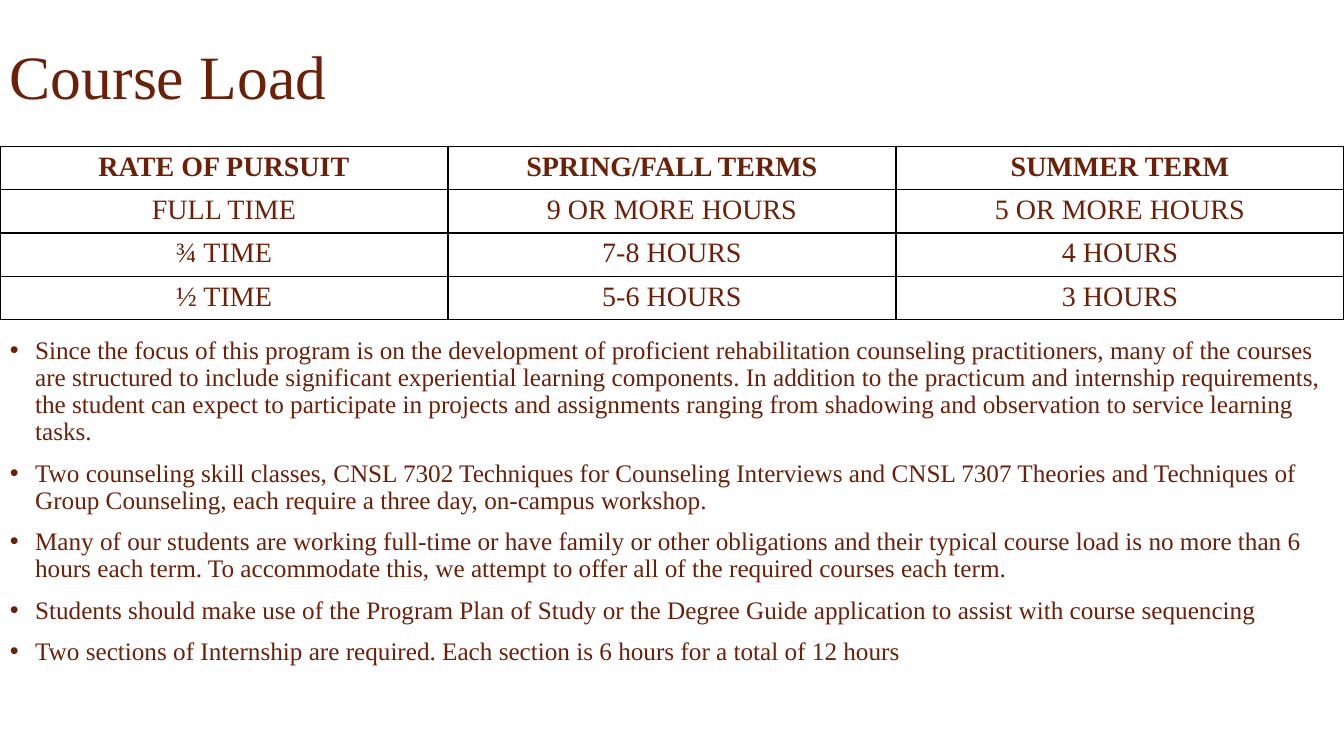
"""Build the Course Load slide with its table of hours and its notes."""
from dataclasses import dataclass

from lxml.etree import SubElement
from pptx import Presentation
from pptx.dml.color import RGBColor
from pptx.enum.text import MSO_ANCHOR, PP_ALIGN
from pptx.oxml.ns import qn
from pptx.slide import Slide
from pptx.table import _Cell
from pptx.text.text import TextFrame, _Paragraph
from pptx.util import Emu, Pt

EMU_PER_PX = 6350
SLIDE_WIDTH, SLIDE_HEIGHT = 1920, 1080
TABLE_TOP, ROW_HEIGHT = 209, 62
FONT_NAME = "Times New Roman"
COLOURS = {"text": "6C2008", "cell": "FFFFFF", "border": "000000"}

COURSE_LOADS = [
    ("RATE OF PURSUIT", "SPRING/FALL TERMS", "SUMMER TERM"),
    ("FULL TIME", "9 OR MORE HOURS", "5 OR MORE HOURS"),
    ("¾ TIME", "7-8 HOURS", "4 HOURS"),
    ("½ TIME", "5-6 HOURS", "3 HOURS"),
]
NOTES = (
    "Since the focus of this program is on the development of proficient rehabilitation counseling "
    "practitioners, many of the courses are structured to include significant experiential learning "
    "components. In addition to the practicum and internship requirements, the student can expect to "
    "participate in projects and assignments ranging from shadowing and observation to service "
    "learning tasks.",
    "Two counseling skill classes, CNSL 7302 Techniques for Counseling Interviews and CNSL 7307 "
    "Theories and Techniques of Group Counseling, each require a three day, on-campus workshop.",
    "Many of our students are working full-time or have family or other obligations and their typical "
    "course load is no more than 6 hours each term. To accommodate this, we attempt to offer all of "
    "the required courses each term.",
    "Students should make use of the Program Plan of Study or the Degree Guide application to assist "
    "with course sequencing",
    "Two sections of Internship are required. Each section is 6 hours for a total of 12 hours",
)


@dataclass(frozen=True)
class TextBlock:
    """A text box with its place and format."""

    left: int
    top: int
    width: int
    height: int
    paragraphs: tuple[str, ...]
    size: int
    anchor: MSO_ANCHOR = MSO_ANCHOR.TOP
    bulleted: bool = False


TEXT_BLOCKS = [
    TextBlock(0, 39, 1656, 150, ("Course Load",), 44, anchor=MSO_ANCHOR.MIDDLE),
    TextBlock(0, 475, SLIDE_WIDTH, 505, NOTES, 18, bulleted=True),
]


def px(length: int) -> Emu:
    """Turn a length in px into EMU."""
    return Emu(length * EMU_PER_PX)


def add_bullet(paragraph: _Paragraph) -> None:
    """Give a paragraph a hanging round bullet."""
    properties = paragraph._p.get_or_add_pPr()
    properties.set("marL", str(px(36)))
    properties.set("indent", str(px(-36)))
    SubElement(properties, qn("a:buFont"), typeface="Arial")
    SubElement(properties, qn("a:buChar"), char="•")


def write_text(frame: TextFrame, text: str, *, size: int, first: bool = True, bold: bool = False,
               align: PP_ALIGN = PP_ALIGN.LEFT, spacing: float = 1.0, space_before: int = 0,
               bulleted: bool = False) -> None:
    """Write one formatted paragraph into a text frame."""
    paragraph = frame.paragraphs[0] if first else frame.add_paragraph()
    if bulleted:
        add_bullet(paragraph)
    paragraph.alignment = align
    paragraph.line_spacing = spacing
    paragraph.space_before = Pt(space_before)
    run = paragraph.add_run()
    run.text = text
    run.font.name = FONT_NAME
    run.font.size = Pt(size)
    run.font.bold = bold
    run.font.color.rgb = RGBColor.from_string(COLOURS["text"])


def add_text_block(slide: Slide, block: TextBlock) -> None:
    """Draw a text block on the slide."""
    shape = slide.shapes.add_textbox(px(block.left), px(block.top), px(block.width), px(block.height))
    frame = shape.text_frame
    frame.word_wrap = True
    frame.vertical_anchor = block.anchor
    for index, text in enumerate(block.paragraphs):
        write_text(frame, text, size=block.size, first=index == 0, spacing=0.9,
                   space_before=10 if index else 0, bulleted=block.bulleted)


def format_cell(cell: _Cell) -> None:
    """Set the margins, borders and fill of a table cell."""
    cell.margin_left = cell.margin_right = px(6)
    cell.margin_top = cell.margin_bottom = px(7)
    properties = cell._tc.get_or_add_tcPr()
    for side in ("lnL", "lnR", "lnT", "lnB"):
        line = SubElement(properties, qn(f"a:{side}"), w=str(Pt(1)))
        fill = SubElement(line, qn("a:solidFill"))
        SubElement(fill, qn("a:srgbClr"), val=COLOURS["border"])
    cell.fill.solid()
    cell.fill.fore_color.rgb = RGBColor.from_string(COLOURS["cell"])


def add_course_load_table(slide: Slide) -> None:
    """Draw the table of hours per rate of pursuit."""
    row_count, column_count = len(COURSE_LOADS), len(COURSE_LOADS[0])
    table = slide.shapes.add_table(row_count, column_count, px(0), px(TABLE_TOP),
                                   px(SLIDE_WIDTH), px(row_count * ROW_HEIGHT)).table
    for row_index, labels in enumerate(COURSE_LOADS):
        for column_index, label in enumerate(labels):
            cell = table.cell(row_index, column_index)
            format_cell(cell)
            write_text(cell.text_frame, label, size=20, bold=row_index == 0, align=PP_ALIGN.CENTER)


def main() -> None:
    """Build and save the presentation."""
    presentation = Presentation()
    presentation.slide_width = px(SLIDE_WIDTH)
    presentation.slide_height = px(SLIDE_HEIGHT)
    slide = presentation.slides.add_slide(presentation.slide_layouts[6])
    add_course_load_table(slide)
    for block in TEXT_BLOCKS:
        add_text_block(slide, block)
    presentation.save("out.pptx")


if __name__ == "__main__":
    main()
